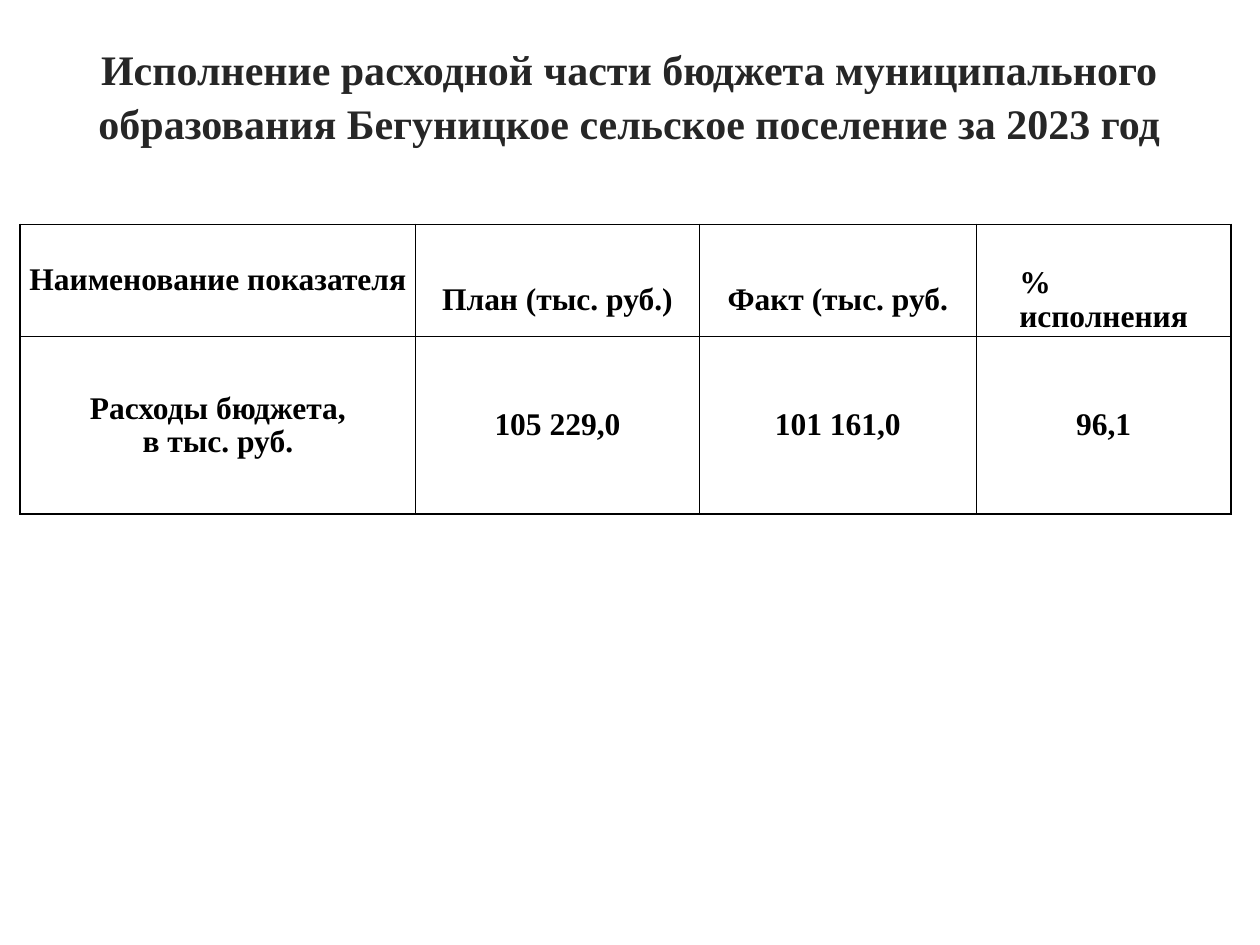
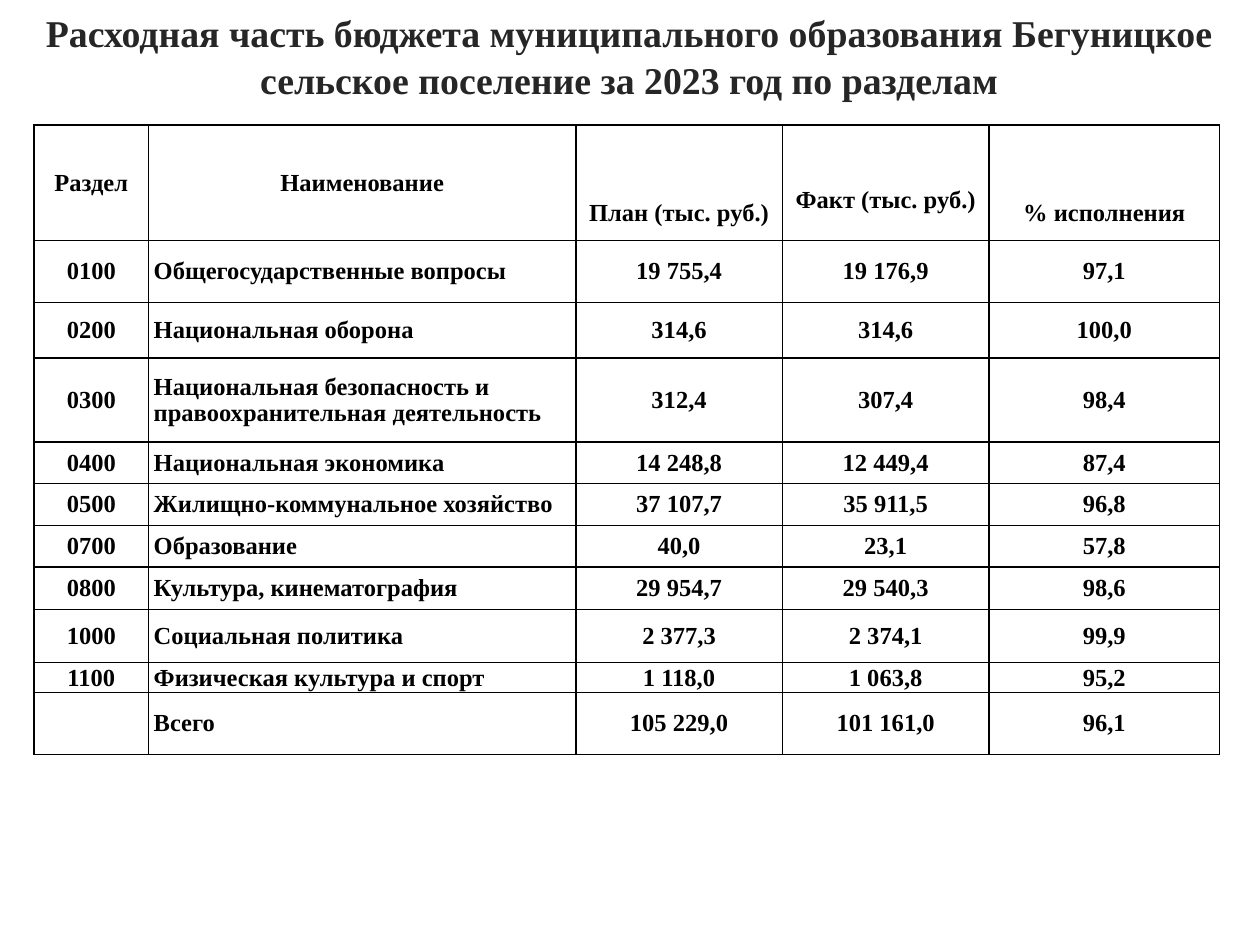
from dataclasses import dataclass

from lxml import etree
from pptx import Presentation
from pptx import util as u
from pptx.dml.color import RGBColor
from pptx.enum import text
from pptx.oxml import ns

CENTER, LEFT = text.PP_ALIGN.CENTER, text.PP_ALIGN.LEFT
MIDDLE, TOP = text.MSO_ANCHOR.MIDDLE, text.MSO_ANCHOR.TOP


@dataclass(frozen=True)
class Theme:
    font: str = "Times New Roman"
    title_color: str = "262626"
    ink: str = "000000"
    paper: str = "FFFFFF"
    title_large: float = 24
    title_small: float = 21.6
    table_large: float = 18
    table_small: float = 14
    border: float = 1
    cell_spacing: float = 0.95
    cell_inset: float = 0.01
    name_inset: float = 0.04


def write_text(frame, content, *, font, size, color, align=CENTER, spacing=1.0):
    """Write each line of content as one bold paragraph."""
    frame.word_wrap = True
    for index, line in enumerate(content.split("\n")):
        paragraph = frame.paragraphs[0] if index == 0 else frame.add_paragraph()
        paragraph.alignment = align
        paragraph.line_spacing = spacing
        run = paragraph.add_run()
        run.text = line
        run.font.name = font
        run.font.size = u.Pt(size)
        run.font.bold = True
        run.font.color.rgb = RGBColor.from_string(color)


def set_insets(target, left, top, right, bottom):
    target.margin_left, target.margin_top = u.Inches(left), u.Inches(top)
    target.margin_right, target.margin_bottom = u.Inches(right), u.Inches(bottom)


class BudgetDeck:
    def __init__(self, theme):
        self.theme = theme
        self.presentation = Presentation()
        self.presentation.slide_width = u.Inches(10)
        self.presentation.slide_height = u.Inches(7.5)
        self.slide = None

    def new_slide(self):
        self.slide = self.presentation.slides.add_slide(
            self.presentation.slide_layouts[6])

    def title(self, content, top, height, size, insets, spacing):
        shape = self.slide.shapes.add_textbox(
            u.Inches(0.23), u.Inches(top), u.Inches(9.53), u.Inches(height))
        frame = shape.text_frame
        frame.vertical_anchor = text.MSO_ANCHOR.BOTTOM
        set_insets(frame, *insets)
        write_text(frame, content, font=self.theme.font, size=size,
                   color=self.theme.title_color, spacing=spacing)

    def borders(self, cell, open_side=None):
        properties = cell._tc.get_or_add_tcPr()
        for side in "LRTB":
            line = etree.SubElement(properties, ns.qn(f"a:ln{side}"),
                                    w=str(u.Pt(self.theme.border)))
            if side == open_side:
                etree.SubElement(line, ns.qn("a:noFill"))
                continue
            fill = etree.SubElement(line, ns.qn("a:solidFill"))
            etree.SubElement(fill, ns.qn("a:srgbClr"), val=self.theme.ink)

    def table(self, left, top, widths, heights, rows, size, merged, formats):
        """Draw a table whose two header rows read as one.

        merged: number of leading columns that span both header rows.
        formats: (row, column) or column -> alignment, anchor, left inset.
        """
        theme = self.theme
        shape = self.slide.shapes.add_table(
            len(heights), len(widths), u.Inches(left), u.Inches(top),
            u.Inches(sum(widths)), u.Inches(sum(heights)))
        table = shape.table
        table.first_row = table.horz_banding = False
        for column, width in zip(table.columns, widths):
            column.width = u.Inches(width)
        for row, height in zip(table.rows, heights):
            row.height = u.Inches(height)

        # The header wording sits in the first row only where cells are merged
        header, *body = rows
        upper = [*header[:merged], *[""] * (len(header) - merged)]
        lower = [*[""] * merged, *header[merged:]]
        for row_index, values in enumerate([upper, lower, *body]):
            for column_index, value in enumerate(values):
                cell = table.cell(row_index, column_index)
                split = column_index >= merged
                self.borders(cell, {0: "B", 1: "T"}.get(row_index) if split else None)
                cell.fill.solid()
                cell.fill.fore_color.rgb = RGBColor.from_string(theme.paper)
                default = (CENTER, MIDDLE, theme.cell_inset)
                if row_index > 1:
                    default = formats.get(column_index, default)
                align, anchor, inset = formats.get((row_index, column_index), default)
                cell.vertical_anchor = anchor
                set_insets(cell, inset, theme.cell_inset, theme.cell_inset, 0)
                write_text(cell.text_frame, value, font=theme.font, size=size,
                           color=theme.ink, align=align, spacing=theme.cell_spacing)
        for column_index in range(merged):
            table.cell(0, column_index).merge(table.cell(1, column_index))


def main():
    theme = Theme()
    deck = BudgetDeck(theme)

    # Total spending
    deck.new_slide()
    deck.title("Исполнение расходной части бюджета муниципального "
               "образования Бегуницкое сельское поселение за 2023 год",
               0.28, 0.89, theme.title_large, (0, 0.05, 0, 0), 1.07)
    deck.table(
        0.16, 1.78, [3.14, 2.25, 2.2, 2.02], [0.3, 0.55, 1.41],
        [["Наименование показателя", "План (тыс. руб.)", "Факт (тыс. руб.",
          "%\nисполнения"],
         ["Расходы бюджета,\nв тыс. руб.", "105 229,0", "101 161,0", "96,1"]],
        theme.table_large, merged=1,
        formats={(1, 3): (LEFT, MIDDLE, 0.34)})

    # Spending by section
    deck.new_slide()
    deck.title("Расходная часть бюджета муниципального образования Бегуницкое "
               "сельское поселение за 2023 год по разделам",
               0, 0.86, theme.title_small, (0.1, 0.05, 0.1, 0.05), 1.04)
    sections = [
        ["Раздел", "Наименование", "План (тыс. руб.)", "Факт (тыс. руб.)",
         "% исполнения"],
        ["0100", "Общегосударственные вопросы", "19 755,4", "19 176,9", "97,1"],
        ["0200", "Национальная оборона", "314,6", "314,6", "100,0"],
        ["0300", "Национальная безопасность и правоохранительная деятельность",
         "312,4", "307,4", "98,4"],
        ["0400", "Национальная экономика", "14 248,8", "12 449,4", "87,4"],
        ["0500", "Жилищно-коммунальное хозяйство", "37 107,7", "35 911,5", "96,8"],
        ["0700", "Образование", "40,0", "23,1", "57,8"],
        ["0800", "Культура, кинематография", "29 954,7", "29 540,3", "98,6"],
        ["1000", "Социальная политика", "2 377,3", "2 374,1", "99,9"],
        ["1100", "Физическая культура и спорт", "1 118,0", "1 063,8", "95,2"],
        ["", "Всего", "105 229,0", "101 161,0", "96,1"],
    ]
    deck.table(
        0.27, 0.99, [0.91, 3.39, 1.64, 1.64, 1.83],
        [0.49, 0.43, 0.49, 0.44, 0.67, 0.33, 0.33, 0.33, 0.34, 0.42, 0.24, 0.49],
        sections, theme.table_small, merged=2,
        formats={1: (LEFT, MIDDLE, theme.name_inset),
                 (1, 3): (CENTER, TOP, theme.cell_inset)})

    deck.presentation.save("out.pptx")


if __name__ == "__main__":
    main()
